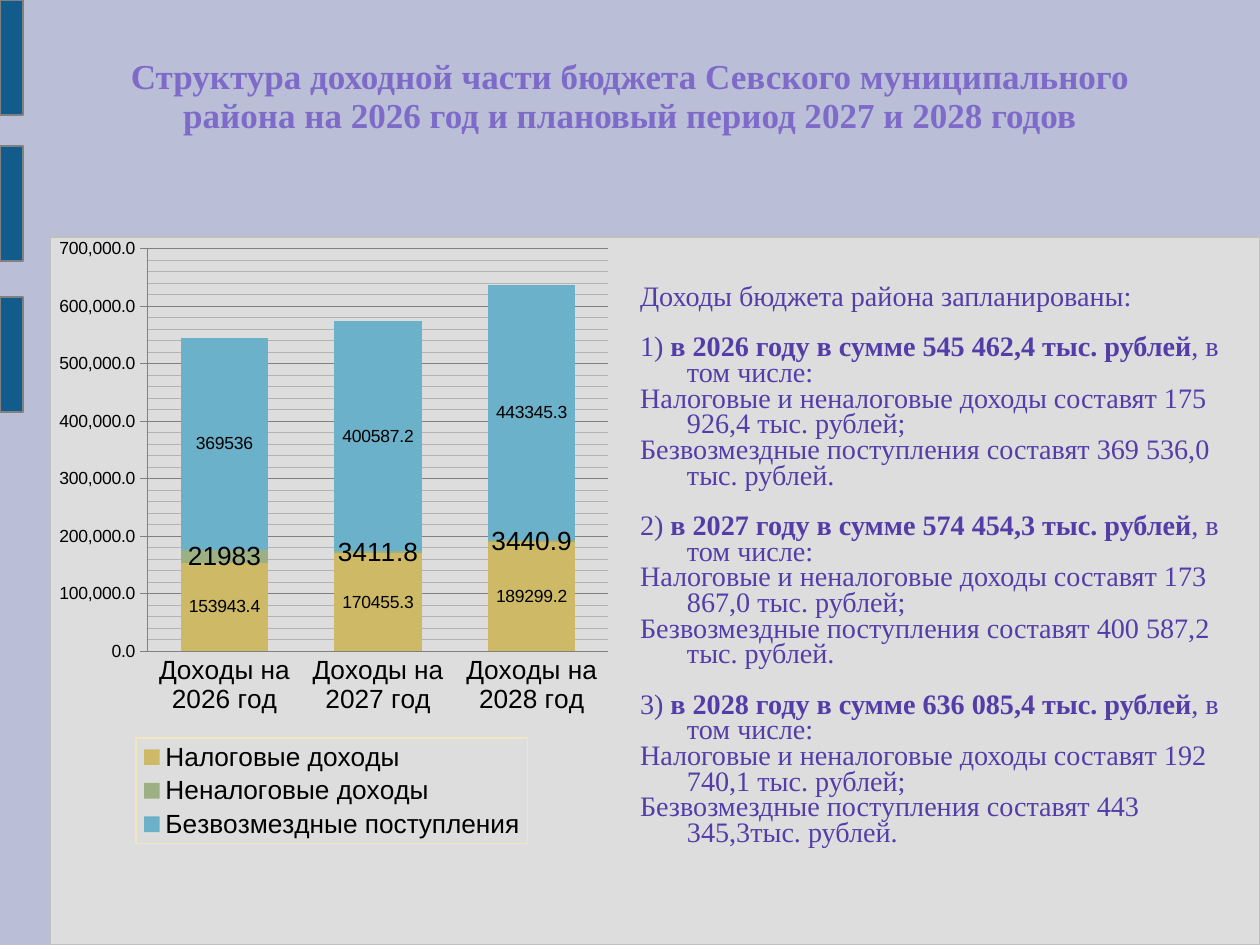
from lxml import etree
from pptx import Presentation
from pptx import util as u
from pptx.chart.data import CategoryChartData
from pptx.dml.color import RGBColor
from pptx.enum import chart as kinds, shapes, text
from pptx.oxml import parse_xml
from pptx.oxml.ns import nsdecls, qn

PX = 914400 / 126
BACK = RGBColor(0xBA, 0xBE, 0xD6)
PANEL = RGBColor(0xDD, 0xDD, 0xDD)
EDGE = RGBColor(0xC0, 0xC0, 0xC0)
BLUE = RGBColor(0x12, 0x5C, 0x8D)
GREY = RGBColor(0x80, 0x80, 0x80)
MINOR = RGBColor(0xB3, 0xB3, 0xB3)
CREAM = RGBColor(0xF0, 0xE6, 0xC0)
LILAC = RGBColor(0x7E, 0x6B, 0xC9)
VIOLET = RGBColor(0x53, 0x3E, 0xA9)
BLACK = RGBColor(0, 0, 0)
GOLD = RGBColor(0xCE, 0xB9, 0x66)
GREEN = RGBColor(0x9C, 0xB0, 0x84)
SKY = RGBColor(0x6B, 0xB1, 0xC9)
SERIF = "Times New Roman"


def box(*sizes):
    """Turn px into EMU."""
    return [u.Emu(round(n * PX)) for n in sizes]


def layout(x, y, w, h, inner=False):
    """Return a manual chart layout, in fractions of the chart."""
    target = '<c:layoutTarget val="inner"/>' if inner else ""
    return parse_xml(
        f'<c:layout {nsdecls("c")}><c:manualLayout>{target}'
        '<c:xMode val="edge"/><c:yMode val="edge"/>'
        f'<c:x val="{x}"/><c:y val="{y}"/><c:w val="{w}"/><c:h val="{h}"/>'
        '</c:manualLayout></c:layout>')


deck = Presentation()
deck.slide_width, deck.slide_height = box(1260, 945)
slide = deck.slides.add_slide(deck.slide_layouts[1])
slide.background.fill.solid()
slide.background.fill.fore_color.rgb = BACK
tree = slide.shapes._spTree
title, body = slide.placeholders

# Panel and side bars
blocks = [((50, 237, 1210, 708), PANEL, EDGE)]
blocks += [((0, top, 23, 115), BLUE, GREY) for top in (0, 146, 297)]
for place, fill, line in blocks:
    block = slide.shapes.add_shape(
        shapes.MSO_SHAPE.ROUNDED_RECTANGLE, *box(*place))
    block.adjustments[0] = 0
    block.shadow.inherit = False
    block.fill.solid()
    block.fill.fore_color.rgb = fill
    block.line.color.rgb = line
    block.line.width = u.Pt(0.75)

# Title
tree.append(title._element)
title.left, title.top, title.width, title.height = box(92, 0, 1076, 195)
frame = title.text_frame
frame.text = ("Структура доходной части бюджета Севского муниципального "
              "района на 2026 год и плановый период 2027 и 2028 годов")
frame.auto_size = text.MSO_AUTO_SIZE.NONE
frame.vertical_anchor = text.MSO_ANCHOR.MIDDLE
frame.margin_left = frame.margin_right = frame.margin_top = frame.margin_bottom = 0
head = frame.paragraphs[0]
head.alignment = text.PP_ALIGN.CENTER
head.line_spacing = 0.93
head.font.name, head.font.size, head.font.bold = SERIF, u.Pt(20), True
head.font.color.rgb = LILAC

# Chart of income by year
series = [
    ("Налоговые доходы", (153943.4, 170455.3, 189299.2), GOLD, 10),
    ("Неналоговые доходы", (21983, 3411.8, 3440.9), GREEN, 15),
    ("Безвозмездные поступления", (369536, 400587.2, 443345.3), SKY, 10),
]
data = CategoryChartData()
data.categories = [f"Доходы на {year} год" for year in (2026, 2027, 2028)]
for name, vals, _, _ in series:
    data.add_series(name, vals)
chart = slide.shapes.add_chart(
    kinds.XL_CHART_TYPE.COLUMN_STACKED, *box(44, 224, 576, 620), data).chart
chart.has_title = False
chart.font.name, chart.font.size = "Arial", u.Pt(18)
chart.font.color.rgb = BLACK

plot = chart.plots[0]
plot.gap_width, plot.overlap, plot.vary_by_categories = 75, 100, False
for bar, (_, _, color, size) in zip(plot.series, series):
    bar.format.fill.solid()
    bar.format.fill.fore_color.rgb = color
    tags = bar.data_labels
    tags.show_value = True
    tags.position = kinds.XL_LABEL_POSITION.CENTER
    tags.font.size = u.Pt(size)
    tags.font.name = "Arial"
    tags.font.color.rgb = BLACK

years, sums = chart.category_axis, chart.value_axis
years.major_tick_mark = kinds.XL_TICK_MARK.NONE
years.tick_labels.font.size = u.Pt(15)
sums.major_tick_mark = kinds.XL_TICK_MARK.OUTSIDE
sums.minimum_scale, sums.maximum_scale = 0, 700000
sums.major_unit, sums.minor_unit = 100000, 20000
sums.has_major_gridlines = sums.has_minor_gridlines = True
sums.tick_labels.font.size = u.Pt(10)
sums.tick_labels.number_format = "#,##0.0"
sums.tick_labels.number_format_is_linked = False
for part in (years, sums, sums.major_gridlines):
    part.format.line.color.rgb = GREY
    part.format.line.width = u.Pt(0.75)

area = chart._chartSpace.chart.plotArea
for old in area.findall(qn("c:layout")):
    area.remove(old)
area.insert(0, layout(0.18, 0.04, 0.8, 0.65, inner=True))

chart.has_legend = True
legend = chart.legend
legend.position = kinds.XL_LEGEND_POSITION.BOTTOM
legend.include_in_layout = False
legend.font.size = u.Pt(15)
node = legend._element
for old in node.findall(qn("c:layout")):
    node.remove(old)
node.find(qn("c:legendPos")).addnext(layout(0.16, 0.83, 0.68, 0.17))

# Lines of the minor grid and the legend frame
grid = area.find(".//" + qn("c:minorGridlines"))
for owner, color in ((grid, MINOR), (node, CREAM)):
    style = parse_xml(
        f'<c:spPr {nsdecls("c", "a")}><a:ln w="9525"><a:solidFill>'
        f'<a:srgbClr val="{color}"/></a:solidFill></a:ln></c:spPr>')
    owner.insert(len(owner) - 1 if len(owner) else 0, style)

# Planned income text
tree.append(body._element)
body.left, body.top, body.width, body.height = box(640, 224, 595, 620)
frame = body.text_frame
frame.auto_size = text.MSO_AUTO_SIZE.NONE
frame.vertical_anchor = text.MSO_ANCHOR.TOP
frame.margin_left, frame.margin_top, frame.margin_right, frame.margin_bottom = box(0, 62, 0, 0)
plans = [
    ("2026", "545 462,4", "175 926,4", "369 536,0 "),
    ("2027", "574 454,3", "173 867,0", "400 587,2 "),
    ("2028", "636 085,4", "192 740,1", "443 345,3"),
]
lines = [["Доходы бюджета района запланированы:"]]
for num, (year, total, own, grant) in enumerate(plans, 1):
    lines += [
        [f"{num}) ", f"в {year} году в сумме {total} тыс. рублей", ", в том числе:"],
        [f"Налоговые и неналоговые доходы составят {own} тыс. рублей;"],
        [f"Безвозмездные поступления составят {grant}тыс. рублей."],
    ]
for i, parts in enumerate(lines):
    para = frame.add_paragraph() if i else frame.paragraphs[0]
    props = para._p.get_or_add_pPr()
    props.set("marL", str(box(47)[0]))
    props.set("indent", str(box(-47)[0]))
    etree.SubElement(props, qn("a:buNone"))
    para.line_spacing = 0.76
    para.space_before = u.Pt(14 if len(parts) > 1 else 0)
    para.font.name, para.font.size = SERIF, u.Pt(16.1)
    para.font.color.rgb = VIOLET
    for j, words in enumerate(parts):
        run = para.add_run()
        run.text = words
        if j == 1:
            run.font.bold = True

deck.save("out.pptx")
